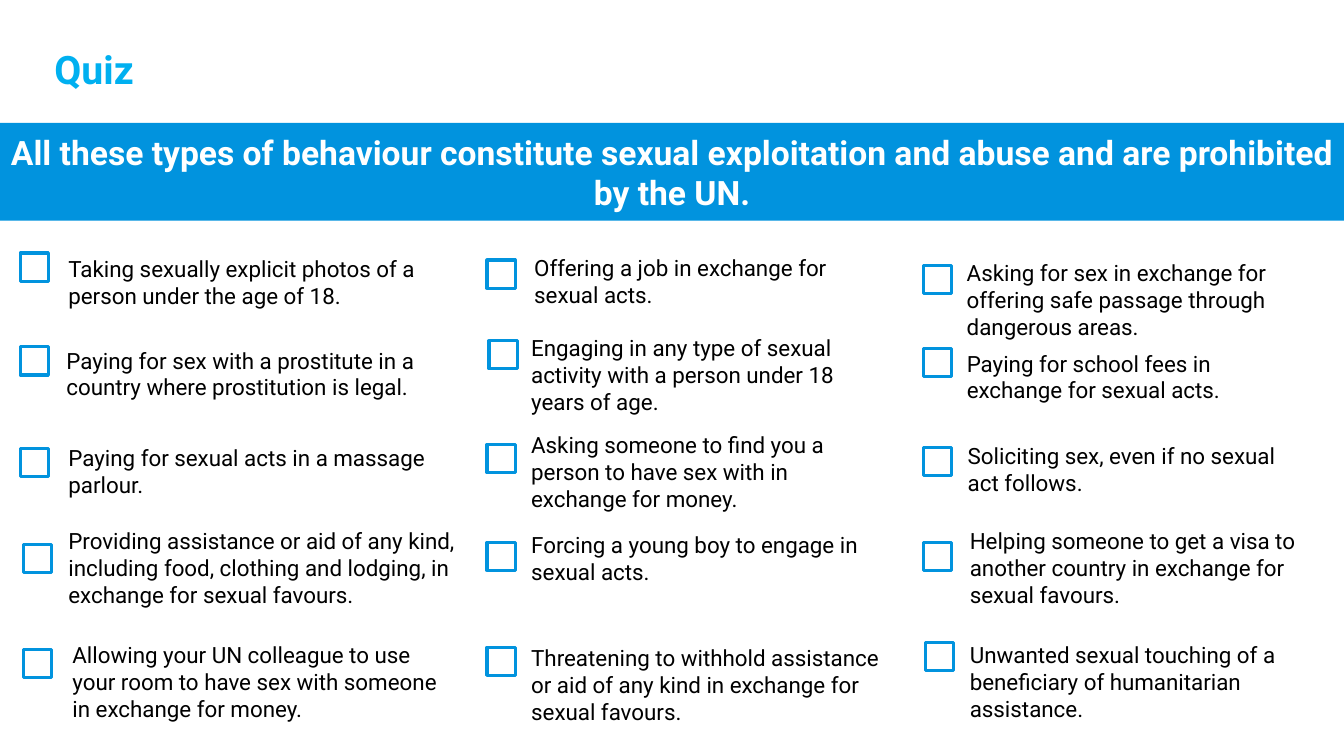
from pptx import Presentation
from pptx.dml.color import RGBColor
from pptx.enum.shapes import MSO_SHAPE
from pptx.enum.text import MSO_ANCHOR, MSO_AUTO_SIZE, PP_ALIGN
from pptx.util import Pt

PX = 9144  # EMU per px, 100 px to the inch
BLUE = RGBColor(0x01, 0x93, 0xDE)
SKY = RGBColor(0x00, 0xB0, 0xF0)
WHITE = RGBColor(0xFF, 0xFF, 0xFF)
BLACK = RGBColor(0x00, 0x00, 0x00)
FONT = "Roboto"
RECT = MSO_SHAPE.RECTANGLE
TOP, MIDDLE = MSO_ANCHOR.TOP, MSO_ANCHOR.MIDDLE
LEFT, CENTER = PP_ALIGN.LEFT, PP_ALIGN.CENTER
GROW = MSO_AUTO_SIZE.SHAPE_TO_FIT_TEXT

WIDTH, HEIGHT = 1333, 750
CHECKBOX = 28
LINE_HEIGHT, PADDING = 27, 10

TITLE = "Quiz"
BANNER = ("All these types of behaviour constitute sexual exploitation "
          "and abuse and are prohibited by the UN.")

# wording, lines, (text left, top, width), (checkbox left, top)
ANSWERS = [
    ("Taking sexually explicit photos of a person under the age of 18.",
     2, (58, 248, 433), (20, 251)),
    ("Paying for sex with a prostitute in a country where prostitution is legal.",
     2, (56, 339, 401), (20, 344)),
    ("Paying for sexual acts in a massage parlour.",
     2, (58, 436, 415), (20, 445)),
    ("Providing assistance or aid of any kind, including food, clothing and "
     "lodging, in exchange for sexual favours.",
     3, (58, 518, 405), (23, 540)),
    ("Allowing your UN colleague to use your room to have sex with someone "
     "in exchange for money.",
     3, (62, 631, 395), (23, 644)),
    ("Offering a job in exchange for sexual acts.",
     2, (520, 247, 374), (483, 258)),
    ("Engaging in any type of sexual activity with a person under 18 years of age.",
     3, (517, 327, 374), (485, 338)),
    ("Asking someone to find you a person to have sex with in exchange for money.",
     3, (517, 423, 370), (483, 441)),
    ("Forcing a young boy to engage in sexual acts.",
     2, (517, 522, 379), (483, 538)),
    ("Threatening to withhold assistance or aid of any kind in exchange for "
     "sexual favours.",
     3, (517, 634, 387), (483, 642)),
    ("Asking for sex in exchange for offering safe passage through dangerous areas.",
     3, (949, 252, 384), (916, 263)),
    ("Paying for school fees in exchange for sexual acts.",
     2, (949, 342, 362), (916, 346)),
    ("Soliciting sex, even if no sexual act follows.",
     2, (950, 434, 360), (916, 444)),
    ("Helping someone to get a visa to another country in exchange for "
     "sexual favours.",
     3, (952, 518, 358), (916, 538)),
    ("Unwanted sexual touching of a beneficiary of humanitarian assistance.",
     3, (952, 631, 381), (918, 637)),
]


def px(*lengths):
    return [n * PX for n in lengths]


def write(shape, text, size, color, bold=False, align=LEFT, anchor=TOP):
    tf = shape.text_frame
    tf.text = text
    tf.word_wrap = True
    tf.vertical_anchor = anchor
    p = tf.paragraphs[0]
    p.alignment = align
    font = p.runs[0].font
    font.name, font.size, font.bold = FONT, Pt(size), bold
    font.color.rgb = color


def add_rect(s, left, top, width, height):
    shape = s.shapes.add_shape(RECT, *px(left, top, width, height))
    shape.shadow.inherit = False
    return shape


def add_answer(s, text, lines, text_place, box_place):
    left, top, width = text_place
    label = s.shapes.add_textbox(
        *px(left, top, width, lines * LINE_HEIGHT + PADDING))
    write(label, text, 16, BLACK)
    label.text_frame.auto_size = GROW
    checkbox = add_rect(s, *box_place, CHECKBOX, CHECKBOX)
    checkbox.fill.background()
    checkbox.line.color.rgb = BLUE
    checkbox.line.width = Pt(2.25)


def main():
    prs = Presentation()
    prs.slide_width, prs.slide_height = px(WIDTH, HEIGHT)
    s = prs.slides.add_slide(prs.slide_layouts[5])

    title = s.shapes.title
    title.left, title.top, title.width, title.height = px(44, 40, 667, 57)
    write(title, TITLE, 28, SKY, bold=True)
    title.text_frame.auto_size = GROW

    banner = add_rect(s, 0, 122, WIDTH, 97)
    banner.fill.solid()
    banner.fill.fore_color.rgb = BLUE
    banner.line.fill.background()
    write(banner, BANNER, 24, WHITE, bold=True, align=CENTER, anchor=MIDDLE)

    for answer in ANSWERS:
        add_answer(s, *answer)

    prs.save("out.pptx")


if __name__ == "__main__":
    main()
